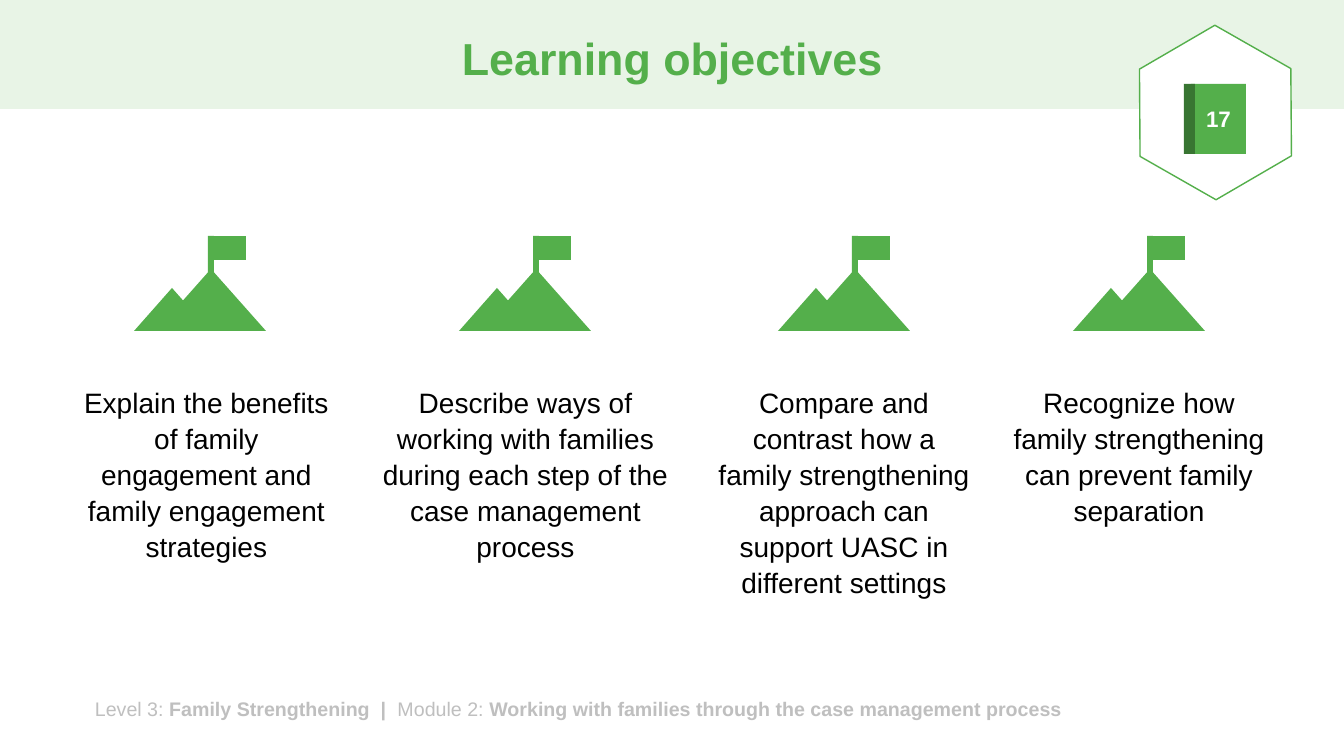
from dataclasses import dataclass
from pptx import Presentation
from pptx.dml.color import RGBColor
from pptx.enum.shapes import MSO_SHAPE as Shape
from pptx.enum.text import MSO_ANCHOR as Anchor, PP_ALIGN as Align
from pptx.util import Emu, Pt

# Content
TITLE = "Learning objectives"
PAGE = "17"
FOOTER = [  # text, bold
    ("Level 3: ", False),
    ("Family Strengthening  |  ", True),
    ("Module 2: ", False),
    ("Working with families through the case management process", True),
]
OBJECTIVES = [  # text, text left, text width, text height, icon left
    ("Explain the benefits of family engagement and family engagement strategies",
     67, 279, 192, 134),
    ("Describe ways of working with families during each step of the case management process",
     364, 323, 192, 459),
    ("Compare and contrast how a family strengthening approach can support UASC in different settings",
     706, 276, 228, 778),
    ("Recognize how family strengthening can prevent family separation",
     1001, 276, 155, 1073),
]
MOUNTAIN_ICON = [  # shape, left, top, width, height within the icon
    (Shape.RECTANGLE, 74, 0, 6, 40),
    (Shape.RECTANGLE, 78, 0, 34, 24),
    (Shape.ISOSCELES_TRIANGLE, 22, 33, 110, 62),
    (Shape.ISOSCELES_TRIANGLE, 0, 52, 76, 43),
]
ICON_TOP = 236
TEXT_TOP = 378


@dataclass(frozen=True)
class Theme:
    font: str = "Arial"
    green: str = "54AF4B"
    dark_green: str = "387532"
    pale_green: str = "E8F4E6"
    gray: str = "BFBFBF"
    black: str = "000000"
    white: str = "FFFFFF"
    title_size: int = 32
    body_size: int = 20
    page_size: int = 16
    footer_size: int = 14


theme = Theme()


def px(length):
    return Emu(round(length * 914400 / 100.8))


def add_block(parent, kind, left, top, width, height, fill, line=None):
    shape = parent.add_shape(kind, px(left), px(top), px(width), px(height))
    shape.shadow.inherit = False
    shape.fill.solid()
    shape.fill.fore_color.rgb = RGBColor.from_string(fill)
    if line:
        shape.line.color.rgb = RGBColor.from_string(line)
        shape.line.width = Pt(1)
    else:
        shape.line.fill.background()
    return shape


def write(shape, runs, size, color, align=Align.CENTER, anchor=Anchor.TOP,
          spacing=1.0, wrap=True):
    frame = shape.text_frame
    frame.word_wrap = wrap
    frame.vertical_anchor = anchor
    paragraph = frame.paragraphs[0]
    paragraph.alignment = align
    paragraph.line_spacing = spacing
    for text, bold in runs:
        run = paragraph.add_run()
        run.text = text
        run.font.name = theme.font
        run.font.size = Pt(size)
        run.font.bold = bold
        run.font.color.rgb = RGBColor.from_string(color)


def add_text(shapes, left, top, width, height, *args, **options):
    box = shapes.add_textbox(px(left), px(top), px(width), px(height))
    write(box, *args, **options)


def main():
    presentation = Presentation()
    presentation.slide_width, presentation.slide_height = px(1344), px(756)
    slide = presentation.slides.add_slide(presentation.slide_layouts[6])
    shapes = slide.shapes

    # Header band, footer and title
    add_block(shapes, Shape.RECTANGLE, 0, 0, 1344, 109, theme.pale_green)
    add_text(shapes, 85, 692, 1070, 34, FOOTER, theme.footer_size, theme.gray,
             align=Align.LEFT)
    add_text(shapes, 93, 13, 1159, 96, [(TITLE, True)], theme.title_size,
             theme.green, anchor=Anchor.MIDDLE, spacing=0.9)

    # Objectives, each under a mountain with a flag
    for text, left, width, height, icon_left in OBJECTIVES:
        add_text(shapes, left, TEXT_TOP, width, height, [(text, False)],
                 theme.body_size, theme.black, spacing=1.07)
        icon = shapes.add_group_shape()
        for kind, dx, dy, part_width, part_height in MOUNTAIN_ICON:
            add_block(icon.shapes, kind, icon_left + dx, ICON_TOP + dy,
                      part_width, part_height, theme.green)

    # Page badge: a book on a hexagon
    badge = shapes.add_group_shape().shapes
    hexagon = add_block(badge, Shape.HEXAGON, 1128, 37, 175, 151,
                        theme.white, theme.green)
    hexagon.adjustments[0] = 0.29
    hexagon.adjustments[1] = 1.155
    hexagon.rotation = 29.7
    cover = add_block(badge, Shape.RECTANGLE, 1191, 84, 55, 70, theme.green)
    write(cover, [(PAGE, True)], theme.page_size, theme.white,
          anchor=Anchor.MIDDLE, wrap=False)
    add_block(badge, Shape.RECTANGLE, 1184, 84, 11, 70, theme.dark_green)

    presentation.save("out.pptx")


if __name__ == "__main__":
    main()
